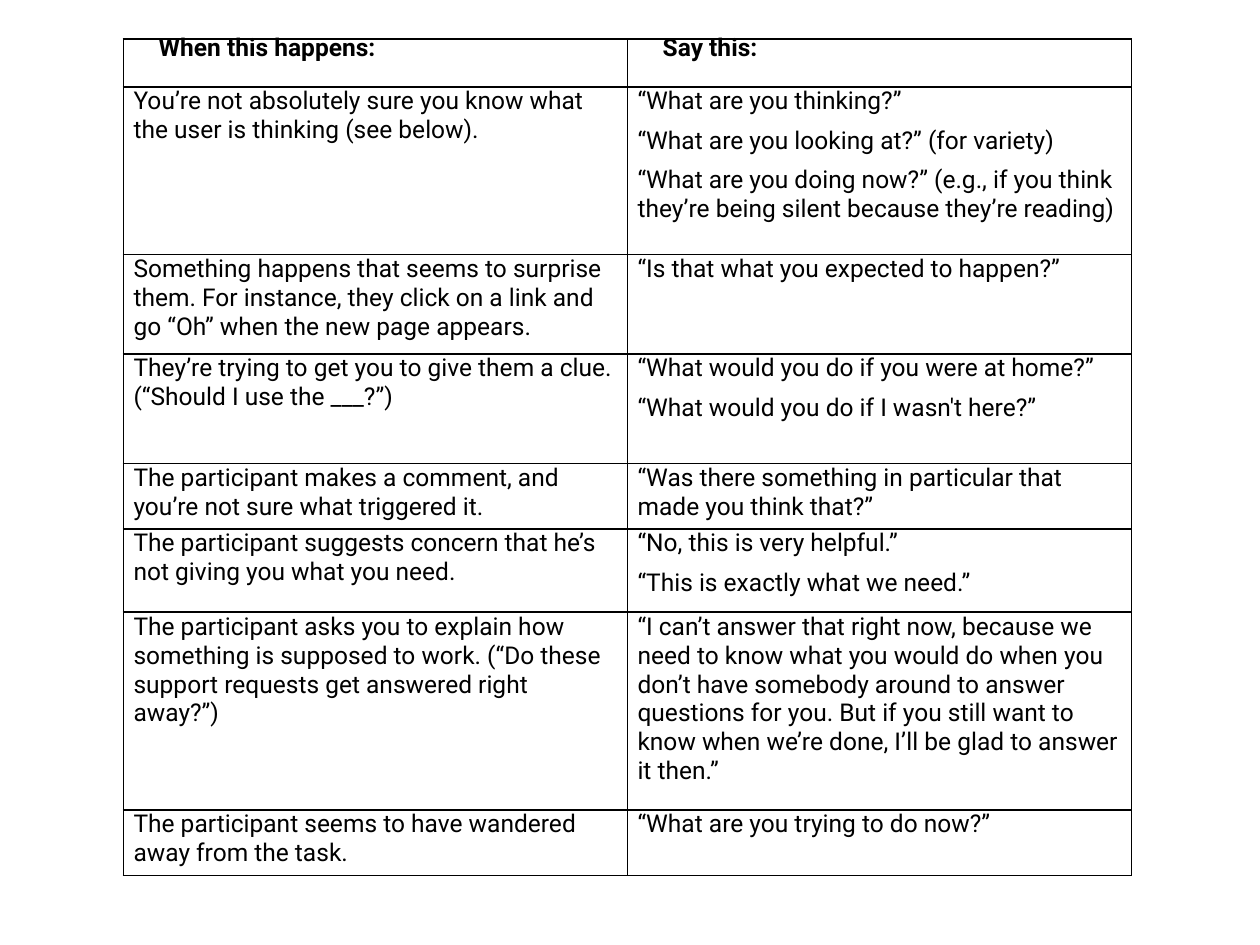
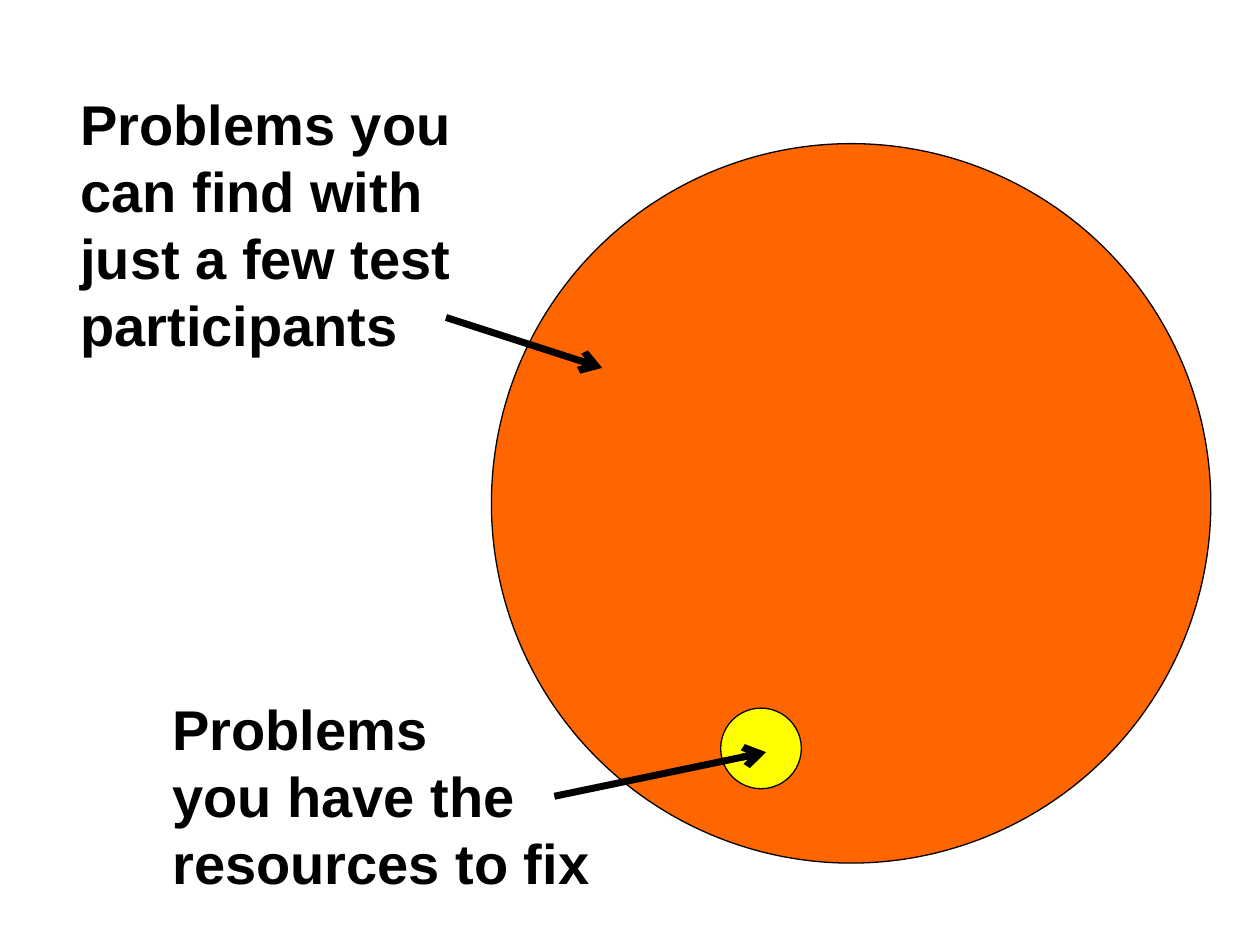
from dataclasses import dataclass

import pptx
import pptx.dml.color
import pptx.enum.dml
import pptx.enum.shapes
import pptx.enum.text
import pptx.oxml.ns
import pptx.oxml.xmlchemy
import pptx.util
from lxml import etree

COLORS = {"ink": "000000", "paper": "FFFFFF", "found": "FF6600", "fixable": "FFFF00"}
SLIDE_W, SLIDE_H = pptx.util.Inches(10), pptx.util.Inches(7.5)
GRID_COLS, GRID_ROWS = 100, 75
BLANK_LAYOUT = 6


@dataclass(frozen=True)
class Box:
    col: float
    row: float
    cols: float
    rows: float

    def place(self) -> tuple[int, int, int, int]:
        return across(self.col), down(self.row), across(self.cols), down(self.rows)


@dataclass(frozen=True)
class Circle:
    box: Box
    color: str


@dataclass(frozen=True)
class Label:
    box: Box
    text: str


@dataclass(frozen=True)
class Arrow:
    start: tuple[float, float]
    end: tuple[float, float]


@dataclass(frozen=True)
class Prompt:
    rows: float
    happens: str
    say: tuple[str, ...]


TABLE_BOX = Box(9.8, 3.1, 80, 66.4)
HEADER_ROWS = 3.8
HEADERS = ("When this happens:", "Say this:")
PROMPTS = (
    Prompt(13.3, "You’re not absolutely sure you know what the user is thinking (see below).",
           ("“What are you thinking?”",
            "“What are you looking at?” (for variety)",
            "“What are you doing now?” (e.g., if you think they’re being silent "
            "because they’re reading)")),
    Prompt(7.9, "Something happens that seems to surprise them. For instance, they click on "
                "a link and go “Oh” when the new page appears.",
           ("“Is that what you expected to happen?”",)),
    Prompt(8.7, "They’re trying to get you to give them a clue. (“Should I use the ___?”)",
           ("“What would you do if you were at home?”",
            "“What would you do if I wasn't here?”")),
    Prompt(5.2, "The participant makes a comment, and you’re not sure what triggered it.",
           ("“Was there something in particular that made you think that?”",)),
    Prompt(6.6, "The participant suggests concern that he’s not giving you what you need.",
           ("“No, this is very helpful.”", "“This is exactly what we need.”")),
    Prompt(15.7, "The participant asks you to explain how something is supposed to work. "
                 "(“Do these support requests get answered right away?”)",
           ("“I can’t answer that right now, because we need to know what you would do "
            "when you don’t have somebody around to answer questions for you. But if you "
            "still want to know when we’re done, I’ll be glad to answer it then.”",)),
    Prompt(5.2, "The participant seems to have wandered away from the task.",
           ("“What are you trying to do now?”",)),
)

CIRCLES = (
    Circle(Box(39, 11.4, 57.1, 57.1), "found"),
    Circle(Box(57.2, 56.2, 6.4, 6.4), "fixable"),
)
LABELS = (
    Label(Box(5.4, 6.6, 37.4, 22.6), "Problems you can find with just a few test participants"),
    Label(Box(12.7, 54.6, 39.7, 17.2), "Problems\nyou have the\nresources to fix"),
)
ARROWS = (
    Arrow((35.4, 25.2), (47.8, 29.2)),
    Arrow((44, 63.2), (60.8, 59.7)),
)


def across(cols: float) -> int:
    return round(SLIDE_W * cols / GRID_COLS)


def down(rows: float) -> int:
    return round(SLIDE_H * rows / GRID_ROWS)


def rgb(name: str) -> pptx.dml.color.RGBColor:
    return pptx.dml.color.RGBColor.from_string(COLORS[name])


def write(tf, *texts: str, font: str, size: float, bold: bool = False, after: float = 0,
          leading: float | None = None, indent: float = 0) -> None:
    tf.word_wrap = True
    for i, text in enumerate(texts):
        p = tf.add_paragraph() if i else tf.paragraphs[0]
        p.space_after = pptx.util.Pt(after)
        if leading:
            p.line_spacing = pptx.util.Pt(leading)
        if indent:
            pPr = p._p.get_or_add_pPr()
            pPr.set("marL", str(across(indent)))
            pPr.set("indent", "0")
        for j, line in enumerate(text.split("\n")):
            if j:
                p.add_line_break()
            r = p.add_run()
            r.text = line
            r.font.name = font
            r.font.size = pptx.util.Pt(size)
            r.font.bold = bold
            r.font.color.rgb = rgb("ink")


def add_child(parent, tag: str, **attrs: str):
    child = etree.SubElement(parent, pptx.oxml.ns.qn(tag))
    for key, value in attrs.items():
        child.set(key, value)
    return child


def style_cell(cell) -> None:
    cell.margin_left = cell.margin_right = across(0.8)
    cell.margin_top = cell.margin_bottom = 0
    tcPr = cell._tc.get_or_add_tcPr()
    for side in ("L", "R", "T", "B"):
        ln = add_child(tcPr, f"a:ln{side}", w=str(pptx.util.Pt(1)))
        add_child(add_child(ln, "a:solidFill"), "a:srgbClr", val=COLORS["ink"])
    cell.fill.solid()
    cell.fill.fore_color.rgb = rgb("paper")


def add_prompt_table(s) -> None:
    table = s.shapes.add_table(len(PROMPTS) + 1, len(HEADERS), *TABLE_BOX.place()).table
    table.first_row = table.horz_banding = False
    for column in table.columns:
        column.width = across(TABLE_BOX.cols / len(HEADERS))
    for row, rows in zip(table.rows, (HEADER_ROWS, *(prompt.rows for prompt in PROMPTS))):
        row.height = down(rows)
    for cell in table.iter_cells():
        style_cell(cell)
    for i, header in enumerate(HEADERS):
        write(table.cell(0, i).text_frame, header, font="Roboto", size=14, bold=True,
              after=9, leading=13.5, indent=2)
    for i, prompt in enumerate(PROMPTS, 1):
        for j, texts in enumerate(((prompt.happens,), prompt.say)):
            write(table.cell(i, j).text_frame, *texts, font="Roboto", size=14, after=6)


def add_circle(s, circle: Circle) -> None:
    sp = s.shapes.add_shape(pptx.enum.shapes.MSO_SHAPE.OVAL, *circle.box.place())
    sp.shadow.inherit = False
    sp.fill.solid()
    sp.fill.fore_color.rgb = rgb(circle.color)
    sp.line.color.rgb = rgb("ink")
    sp.line.width = pptx.util.Pt(0.75)


def add_label(s, label: Label) -> None:
    tf = s.shapes.add_textbox(*label.box.place()).text_frame
    write(tf, label.text, font="Arial", size=32, bold=True)
    tf.auto_size = pptx.enum.text.MSO_AUTO_SIZE.SHAPE_TO_FIT_TEXT


def add_arrow(s, arrow: Arrow) -> None:
    (x1, y1), (x2, y2) = arrow.start, arrow.end
    line = s.shapes.add_connector(pptx.enum.shapes.MSO_CONNECTOR.STRAIGHT,
                                  across(x1), down(y1), across(x2), down(y2))
    line.line.color.rgb = rgb("ink")
    line.line.width = pptx.util.Pt(4)
    add_child(line.line._get_or_add_ln(), "a:tailEnd", type="arrow")
    add_child(line._element.spPr, "a:effectLst")


def add_slide(prs):
    s = prs.slides.add_slide(prs.slide_layouts[BLANK_LAYOUT])
    s.background.fill.solid()
    s.background.fill.fore_color.rgb = rgb("paper")
    return s


def main() -> None:
    prs = pptx.Presentation()
    prs.slide_width, prs.slide_height = SLIDE_W, SLIDE_H
    add_prompt_table(add_slide(prs))
    s = add_slide(prs)
    for items, draw in ((CIRCLES, add_circle), (LABELS, add_label), (ARROWS, add_arrow)):
        for item in items:
            draw(s, item)
    prs.save("out.pptx")


if __name__ == "__main__":
    main()
